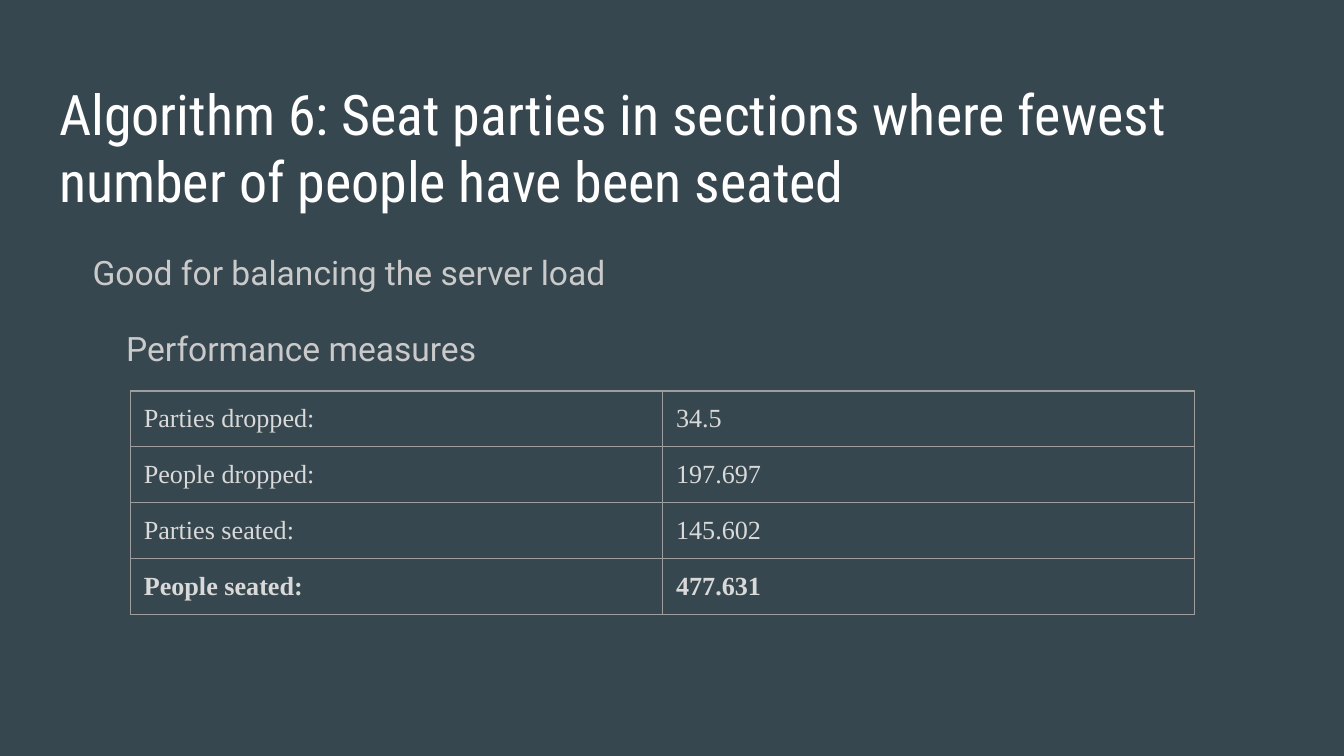
import pptx
import pptx.dml.color
import pptx.enum.text
import pptx.oxml
import pptx.oxml.ns
import pptx.util
from pptx.util import Inches

BACKGROUND = pptx.dml.color.RGBColor(0x37, 0x47, 0x4F)
WHITE = pptx.dml.color.RGBColor(0xFF, 0xFF, 0xFF)
BODY_GRAY = pptx.dml.color.RGBColor(0xCA, 0xCA, 0xCA)
TABLE_GRAY = pptx.dml.color.RGBColor(0xD9, 0xD9, 0xD9)
BORDER_GRAY = pptx.dml.color.RGBColor(0x9E, 0x9E, 0x9E)

SLIDE_WIDTH = Inches(10)
SLIDE_HEIGHT = SLIDE_WIDTH * 9 // 16

TITLE_FONT = {"name": "Roboto Condensed", "size": pptx.util.Pt(30), "color": WHITE}
BODY_FONT = {"name": "Roboto", "size": pptx.util.Pt(18), "color": BODY_GRAY}
TABLE_FONT = {"name": "Times New Roman", "size": pptx.util.Pt(14), "color": TABLE_GRAY}
MARGINS = dict.fromkeys(
    ("margin_left", "margin_top", "margin_right", "margin_bottom"), Inches(0.1)
)
FRAME_FORMAT = {
    **MARGINS,
    "word_wrap": True,
    "auto_size": pptx.enum.text.MSO_AUTO_SIZE.NONE,
    "vertical_anchor": pptx.enum.text.MSO_ANCHOR.TOP,
}

TITLE = "Algorithm 6: Seat parties in sections where fewest number of people have been seated"
BODY_LINES = [
    ("Good for balancing the server load", -0.25),
    ("Performance measures", 0),
]
MEASURES = [
    ("Parties dropped:", "34.5"),
    ("People dropped:", "197.697"),
    ("Parties seated:", "145.602"),
    ("People seated:", "477.631"),
]


def set_attributes(target, values):
    for name, value in values.items():
        setattr(target, name, value)


def write_text(paragraph, text, font_format, bold=False):
    paragraph.alignment = pptx.enum.text.PP_ALIGN.LEFT
    run = paragraph.add_run()
    run.text = text
    run.font.color.rgb = font_format["color"]
    set_attributes(
        run.font,
        {"name": font_format["name"], "size": font_format["size"], "bold": bold},
    )


def add_title(slide, left, top, width, height):
    title = slide.shapes.title
    set_attributes(title, {"left": left, "top": top, "width": width, "height": height})
    set_attributes(title.text_frame, FRAME_FORMAT)
    write_text(title.text_frame.paragraphs[0], TITLE, TITLE_FONT)


def add_body(slide, left, top, width, height):
    frame = slide.shapes.add_textbox(left, top, width, height).text_frame
    set_attributes(frame, FRAME_FORMAT)
    for index, (text, first_indent) in enumerate(BODY_LINES):
        paragraph = frame.add_paragraph() if index else frame.paragraphs[0]
        set_attributes(
            paragraph, {"line_spacing": 1.15, "space_after": pptx.util.Pt(16)}
        )
        write_text(paragraph, text, BODY_FONT)
        properties = paragraph._p.get_or_add_pPr()
        properties.set("marL", str(Inches(0.5)))
        properties.set("indent", str(Inches(first_indent)))


def add_borders(cell):
    properties = cell._tc.get_or_add_tcPr()
    for position, side in enumerate(("lnL", "lnR", "lnT", "lnB")):
        border = pptx.oxml.parse_xml(
            f'<a:{side} {pptx.oxml.ns.nsdecls("a")} w="{pptx.util.Pt(0.75)}">'
            f'<a:solidFill><a:srgbClr val="{BORDER_GRAY}"/></a:solidFill></a:{side}>'
        )
        properties.insert(position, border)


def add_measures_table(slide, left, top, width, height):
    table = slide.shapes.add_table(
        len(MEASURES), len(MEASURES[0]), left, top, width, height
    ).table
    set_attributes(table, {"first_row": False, "horz_banding": False})
    for row_index, measure in enumerate(MEASURES):
        is_last = row_index == len(MEASURES) - 1
        for column_index, text in enumerate(measure):
            cell = table.cell(row_index, column_index)
            set_attributes(cell, MARGINS)
            cell.fill.background()
            write_text(cell.text_frame.paragraphs[0], text, TABLE_FONT, bold=is_last)
            add_borders(cell)


def main():
    presentation = pptx.Presentation()
    set_attributes(
        presentation, {"slide_width": SLIDE_WIDTH, "slide_height": SLIDE_HEIGHT}
    )
    slide = presentation.slides.add_slide(presentation.slide_layouts[5])
    slide.background.fill.solid()
    slide.background.fill.fore_color.rgb = BACKGROUND
    add_title(slide, Inches(0.34), Inches(0.49), Inches(9.32), Inches(0.63))
    add_body(slide, Inches(0.34), Inches(1.73), Inches(9.32), Inches(3.74))
    add_measures_table(slide, Inches(0.97), Inches(2.91), Inches(7.92), Inches(1.66))
    presentation.save("out.pptx")


if __name__ == "__main__":
    main()
